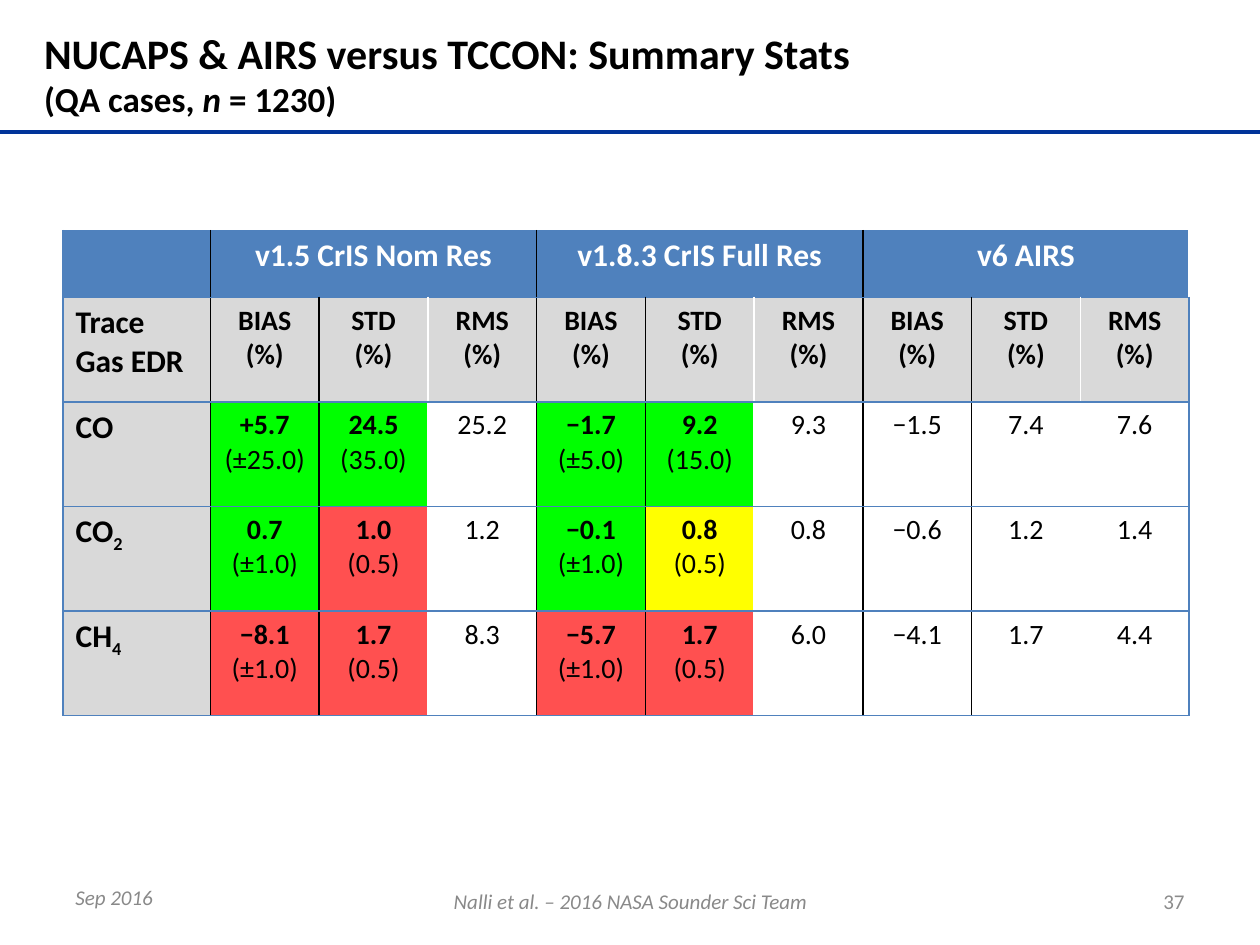
"""Build the trace gas summary statistics slide."""
from lxml.etree import SubElement
from pptx import Presentation
from pptx.dml.color import RGBColor
from pptx.enum.shapes import MSO_CONNECTOR
from pptx.enum.text import MSO_ANCHOR, MSO_AUTO_SIZE, PP_ALIGN
from pptx.oxml.ns import qn
from pptx.util import Inches, Pt

BLACK = RGBColor(0x00, 0x00, 0x00)
WHITE = RGBColor(0xFF, 0xFF, 0xFF)
NAVY = RGBColor(0x00, 0x33, 0x99)
BLUE = RGBColor(0x4F, 0x81, 0xBD)
LIGHT_GRAY = RGBColor(0xD9, 0xD9, 0xD9)
FOOTER_GRAY = RGBColor(0x89, 0x89, 0x89)
NUMBER_GRAY = RGBColor(0x8C, 0x8C, 0x8C)
GREEN = RGBColor(0x00, 0xFF, 0x00)
YELLOW = RGBColor(0xFF, 0xFF, 0x00)
RED = RGBColor(0xFF, 0x50, 0x50)

GROUPS = ["v1.5 CrIS Nom Res", "v1.8.3 CrIS Full Res", "v6 AIRS"]
MEASURES = ["BIAS (%)", "STD (%)", "RMS (%)"]
GASES = [("CO", ""), ("CO", "2"), ("CH", "4")]
RESULTS = [
    [("+5.7", "(±25.0)", GREEN), ("24.5", "(35.0)", GREEN), "25.2",
     ("−1.7", "(±5.0)", GREEN), ("9.2", "(15.0)", GREEN), "9.3",
     "−1.5", "7.4", "7.6"],
    [("0.7", "(±1.0)", GREEN), ("1.0", "(0.5)", RED), "1.2",
     ("−0.1", "(±1.0)", GREEN), ("0.8", "(0.5)", YELLOW), "0.8",
     "−0.6", "1.2", "1.4"],
    [("−8.1", "(±1.0)", RED), ("1.7", "(0.5)", RED), "8.3",
     ("−5.7", "(±1.0)", RED), ("1.7", "(0.5)", RED), "6.0",
     "−4.1", "1.7", "4.4"],
]


def add_run(paragraph, text, size, color=BLACK, bold=False, italic=False):
    run = paragraph.add_run()
    run.text = text
    font = run.font
    font.name, font.size = "Calibri", Pt(size)
    font.bold, font.italic = bold, italic
    font.color.rgb = color
    return run


def add_border(cell, side, color):
    properties = cell._tc.get_or_add_tcPr()
    line = SubElement(properties, qn(f"a:ln{side}"), w=str(Pt(1)))
    fill = SubElement(line, qn("a:solidFill"))
    SubElement(fill, qn("a:srgbClr"), val=str(color))


presentation = Presentation()
presentation.slide_width = Inches(10)
presentation.slide_height = Inches(7.5)
slide = presentation.slides.add_slide(presentation.slide_layouts[5])

rule = slide.shapes.add_connector(
    MSO_CONNECTOR.STRAIGHT, 0, Inches(1.05), Inches(10), Inches(1.05))
rule.line.color.rgb = NAVY
rule.line.width = Pt(2.25)
SubElement(rule._element.spPr, qn("a:effectLst"))

title = slide.shapes.title
title.left, title.top = Inches(0.25), Inches(0.25)
title.width, title.height = Inches(7.83), Inches(0.67)
title.text_frame.auto_size = MSO_AUTO_SIZE.NONE
title.text_frame.vertical_anchor = MSO_ANCHOR.MIDDLE
paragraph = title.text_frame.paragraphs[0]
paragraph.alignment = PP_ALIGN.LEFT
add_run(paragraph, "NUCAPS & AIRS versus TCCON: Summary Stats", 24, bold=True)
paragraph.add_line_break()
add_run(paragraph, "(QA cases, ", 20, bold=True)
add_run(paragraph, "n", 20, bold=True, italic=True)
add_run(paragraph, " = 1230)", 20, bold=True)

table = slide.shapes.add_table(
    5, 10, Inches(0.5), Inches(1.83), Inches(8.94), Inches(3.84)).table
for index, column in enumerate(table.columns):
    column.width = Inches(8.94 - 1.17) // 9 if index else Inches(1.17)
for index, row in enumerate(table.rows):
    row.height = Inches(0.83) if index else Inches(0.53)

for row in range(5):
    for column in range(10):
        cell = table.cell(row, column)
        black_left = column % 3 == 1 or (row > 0 and column % 3 == 2)
        black_right = column in (0, 3, 6) or (row > 0 and column % 3 == 1)
        if column == 0 or black_left:
            add_border(cell, "L", BLACK if black_left else BLUE)
        if column == 9 or black_right:
            add_border(cell, "R", BLACK if black_right else BLUE)
        add_border(cell, "T", BLUE)
        add_border(cell, "B", BLUE)
        cell.fill.solid()
        if row == 0:
            cell.fill.fore_color.rgb = BLUE
        elif row == 1 or column == 0:
            cell.fill.fore_color.rgb = LIGHT_GRAY
        else:
            cell.fill.fore_color.rgb = WHITE

for index, group in enumerate(GROUPS):
    first = 1 + 3 * index
    cell = table.cell(0, first)
    cell.merge(table.cell(0, first + 2))
    paragraph = cell.text_frame.paragraphs[0]
    paragraph.alignment = PP_ALIGN.CENTER
    add_run(paragraph, group, 18, WHITE, bold=True)
    for offset, measure in enumerate(MEASURES):
        paragraph = table.cell(1, first + offset).text_frame.paragraphs[0]
        paragraph.alignment = PP_ALIGN.CENTER
        add_run(paragraph, measure, 16, bold=True)

add_run(table.cell(1, 0).text_frame.paragraphs[0], "Trace Gas EDR", 18, bold=True)
for row, ((gas, subscript), results) in enumerate(zip(GASES, RESULTS), start=2):
    paragraph = table.cell(row, 0).text_frame.paragraphs[0]
    add_run(paragraph, gas, 18, bold=True)
    if subscript:
        run = add_run(paragraph, subscript, 18, bold=True)
        run.font._element.set("baseline", "-25000")
    for column, result in enumerate(results, start=1):
        cell = table.cell(row, column)
        paragraph = cell.text_frame.paragraphs[0]
        paragraph.alignment = PP_ALIGN.CENTER
        if isinstance(result, str):
            add_run(paragraph, result, 16)
            continue
        value, requirement, color = result
        cell.fill.fore_color.rgb = color
        add_run(paragraph, value, 16, bold=True)
        paragraph = cell.text_frame.add_paragraph()
        paragraph.alignment = PP_ALIGN.CENTER
        add_run(paragraph, requirement, 16)

for text, left, top, width, alignment, color, italic in [
    ("Sep 2016", 0.5, 6.92, 2.33, PP_ALIGN.LEFT, FOOTER_GRAY, True),
    ("37", 7.17, 6.95, 2.33, PP_ALIGN.RIGHT, NUMBER_GRAY, False),
    ("Nalli et al. – 2016 NASA Sounder Sci Team", 3.42, 6.95, 3.17,
     PP_ALIGN.CENTER, FOOTER_GRAY, True),
]:
    footer = slide.shapes.add_textbox(
        Inches(left), Inches(top), Inches(width), Inches(0.4))
    footer.text_frame.word_wrap = True
    footer.text_frame.vertical_anchor = MSO_ANCHOR.MIDDLE
    paragraph = footer.text_frame.paragraphs[0]
    paragraph.alignment = alignment
    add_run(paragraph, text, 12, color, italic=italic)

presentation.save("out.pptx")
